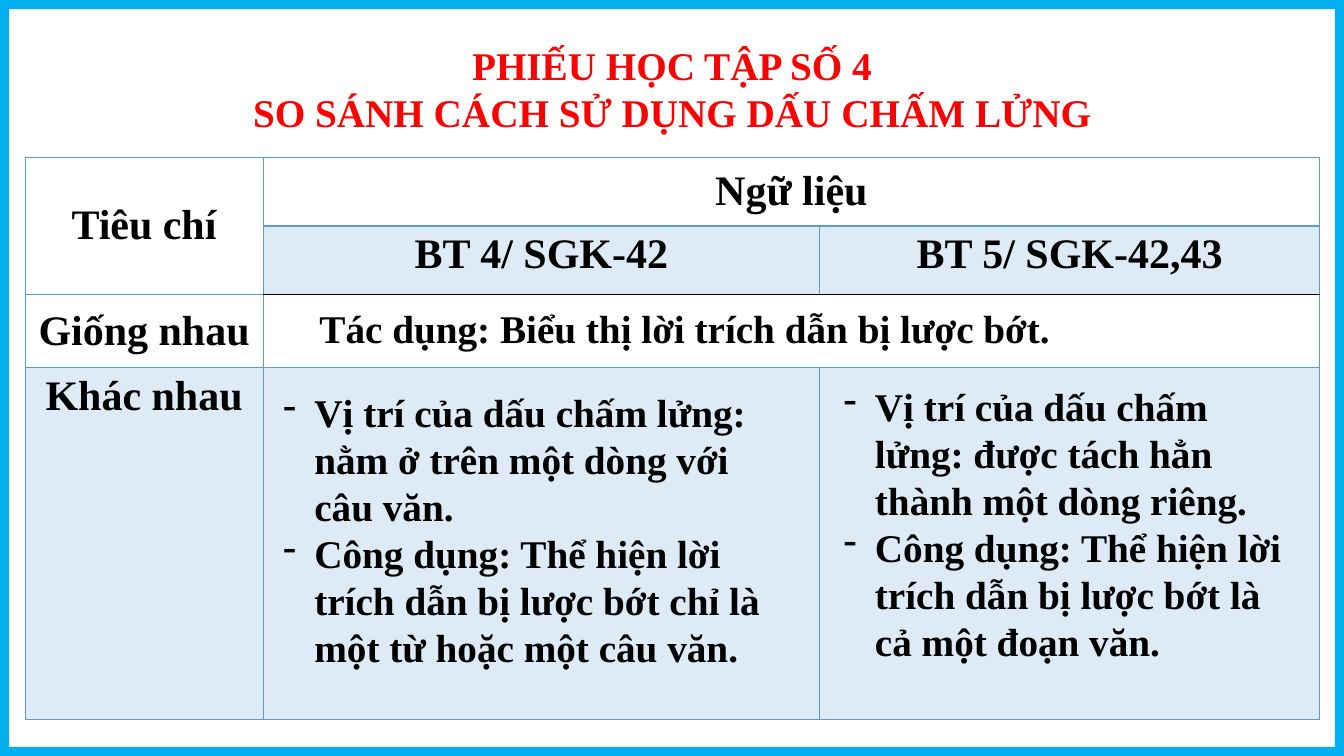
import pptx
import pptx.util
import pptx.dml.color
import pptx.enum.shapes
import pptx.enum.text
import pptx.oxml
import pptx.oxml.ns

Inches = pptx.util.Inches
ALIGN = pptx.enum.text.PP_ALIGN
ANCHOR = pptx.enum.text.MSO_ANCHOR
NAMESPACE = pptx.oxml.ns.nsdecls("a")

WIDTH, HEIGHT = 13.33, 7.5
FONT = "Times New Roman"
BLACK, RED, CYAN, BLUE = "000000", "FF0000", "00B0F0", "5B9BD5"
COLUMNS = [2.36, 5.52, 4.96]
ROWS = [0.68, 0.68, 0.73, 3.49]
TABLE_BOX = (0.25, 1.56, sum(COLUMNS), sum(ROWS))
TITLE_BOX = (1.65, 0.36, 10.03, 1.04)

TITLE = ["PHIẾU HỌC TẬP SỐ 4", "SO SÁNH CÁCH SỬ DỤNG DẤU CHẤM LỬNG"]
LABELS = {
    (0, 0): "Tiêu chí",
    (0, 1): "Ngữ liệu",
    (1, 1): "BT 4/ SGK-42",
    (1, 2): "BT 5/ SGK-42,43",
    (2, 0): "Giống nhau",
    (3, 0): "Khác nhau",
}
MERGES = [((0, 0), (1, 0)), ((0, 1), (0, 2)), ((2, 1), (2, 2))]
TINTED = [(1, 1), (1, 2), (3, 0), (3, 1), (3, 2)]
SIMILARITY = ["Tác dụng: Biểu thị lời trích dẫn bị lược bớt."]
SAME_LINE = [
    "Vị trí của dấu chấm lửng: nằm ở trên một dòng với câu văn.",
    "Công dụng: Thể hiện lời trích dẫn bị lược bớt chỉ là một từ hoặc một câu văn.",
]
SEPARATE_LINE = [
    "Vị trí của dấu chấm lửng: được tách hẳn thành một dòng riêng.",
    "Công dụng: Thể hiện lời trích dẫn bị lược bớt là cả một đoạn văn.",
]


def color(value):
    return pptx.dml.color.RGBColor.from_string(value)


def write(frame, lines, size=28, fill=BLACK, align=ALIGN.LEFT, bullet=None):
    frame.word_wrap = True
    for index, line in enumerate(lines):
        paragraph = frame.add_paragraph() if index else frame.paragraphs[0]
        paragraph.alignment = align
        run = paragraph.add_run()
        run.text = line
        run.font.name = FONT
        run.font.size = pptx.util.Pt(size)
        run.font.bold = True
        run.font.color.rgb = color(fill)
        if bullet:
            properties = paragraph._p.get_or_add_pPr()
            properties.set("marL", str(Inches(0.31)))
            properties.set("indent", str(-Inches(0.31)))
            properties.append(pptx.oxml.parse_xml(f'<a:buChar {NAMESPACE} char="{bullet}"/>'))


def add_text(slide, box, lines, **style):
    shape = slide.shapes.add_textbox(*map(Inches, box))
    write(shape.text_frame, lines, **style)
    shape.text_frame.auto_size = pptx.enum.text.MSO_AUTO_SIZE.SHAPE_TO_FIT_TEXT


def set_borders(cell, row, column):
    under_header = (row, column) in [(0, 1), (0, 2), (1, 0)]
    edges = {side: (BLUE, 1) for side in "LRTB"}
    if under_header:
        edges["B"] = (BLUE, 2)
    if row == 1 and column:
        edges["B"] = (BLACK, 1)
    if row == 2 and column:
        edges["T"] = (BLACK, 1)
    properties = cell._tc.get_or_add_tcPr()
    for position, (side, (line, width)) in enumerate(edges.items()):
        border = pptx.oxml.parse_xml(
            f'<a:ln{side} {NAMESPACE} w="{pptx.util.Pt(width)}"><a:solidFill>'
            f'<a:srgbClr val="{line}"/></a:solidFill></a:ln{side}>'
        )
        properties.insert(position, border)


def set_fill(cell, tinted):
    if not tinted:
        cell.fill.background()
        return
    cell.fill.solid()
    cell.fill.fore_color.rgb = color(BLUE)
    tint = cell._tc.tcPr.find(".//" + pptx.oxml.ns.qn("a:srgbClr"))
    tint.append(pptx.oxml.parse_xml(f'<a:alpha {NAMESPACE} val="20000"/>'))


def add_comparison_table(slide, box):
    table = slide.shapes.add_table(len(ROWS), len(COLUMNS), *map(Inches, box)).table
    table.first_row = False
    table.horz_banding = False
    for column, width in zip(table.columns, COLUMNS):
        column.width = Inches(width)
    for row, height in zip(table.rows, ROWS):
        row.height = Inches(height)
    for row in range(len(ROWS)):
        for column in range(len(COLUMNS)):
            cell = table.cell(row, column)
            set_fill(cell, (row, column) in TINTED)
            set_borders(cell, row, column)
            if (row, column) in LABELS:
                write(cell.text_frame, [LABELS[row, column]], size=30, align=ALIGN.CENTER)
            if row in (0, 2):
                cell.vertical_anchor = ANCHOR.MIDDLE
    for first, last in MERGES:
        table.cell(*first).merge(table.cell(*last))


def add_notes(slide, box):
    left, top = box[:2]
    middle = left + COLUMNS[0]
    right = middle + COLUMNS[1]
    similar = top + sum(ROWS[:2])
    different = similar + ROWS[2]
    add_text(slide, (middle + 0.46, similar + 0.05, 7.46, 1.04), SIMILARITY)
    add_text(slide, (middle + 0.1, different + 0.15, 5.2, 3.4), SAME_LINE, bullet="-")
    add_text(slide, (right + 0.14, different + 0.09, 4.54, 2.93), SEPARATE_LINE, bullet="-")


def add_frame(slide, box):
    shape = slide.shapes.add_shape(pptx.enum.shapes.MSO_SHAPE.FRAME, *map(Inches, box))
    shape.adjustments[0] = 0.012
    shape.shadow.inherit = False
    shape.fill.solid()
    shape.fill.fore_color.rgb = color(CYAN)
    shape.line.fill.background()


def main():
    presentation = pptx.Presentation()
    presentation.slide_width = Inches(WIDTH)
    presentation.slide_height = Inches(HEIGHT)
    slide = presentation.slides.add_slide(presentation.slide_layouts[6])
    add_text(slide, TITLE_BOX, TITLE, fill=RED, align=ALIGN.CENTER)
    add_comparison_table(slide, TABLE_BOX)
    add_frame(slide, (0, 0, WIDTH, HEIGHT))
    add_notes(slide, TABLE_BOX)
    presentation.save("out.pptx")


if __name__ == "__main__":
    main()
